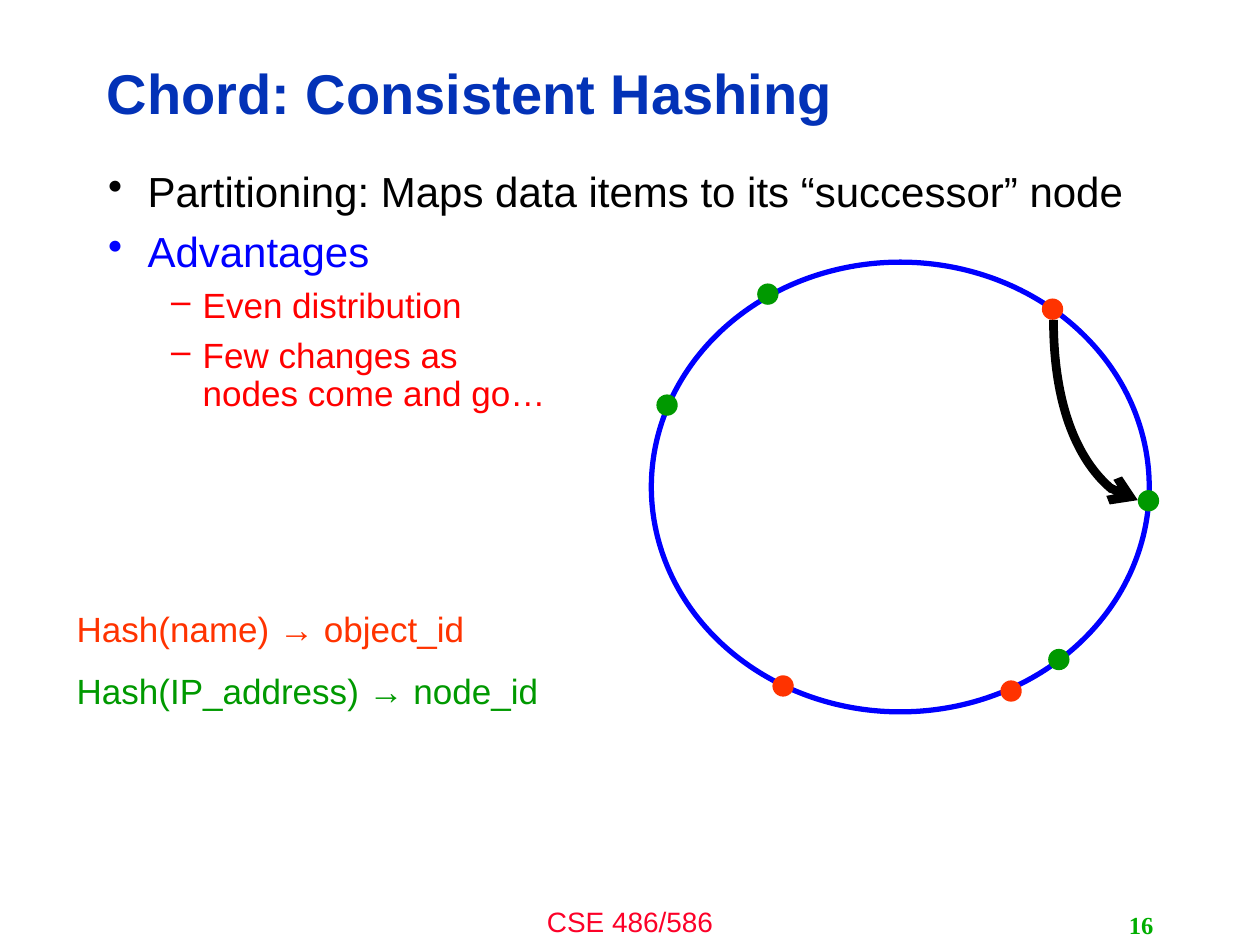
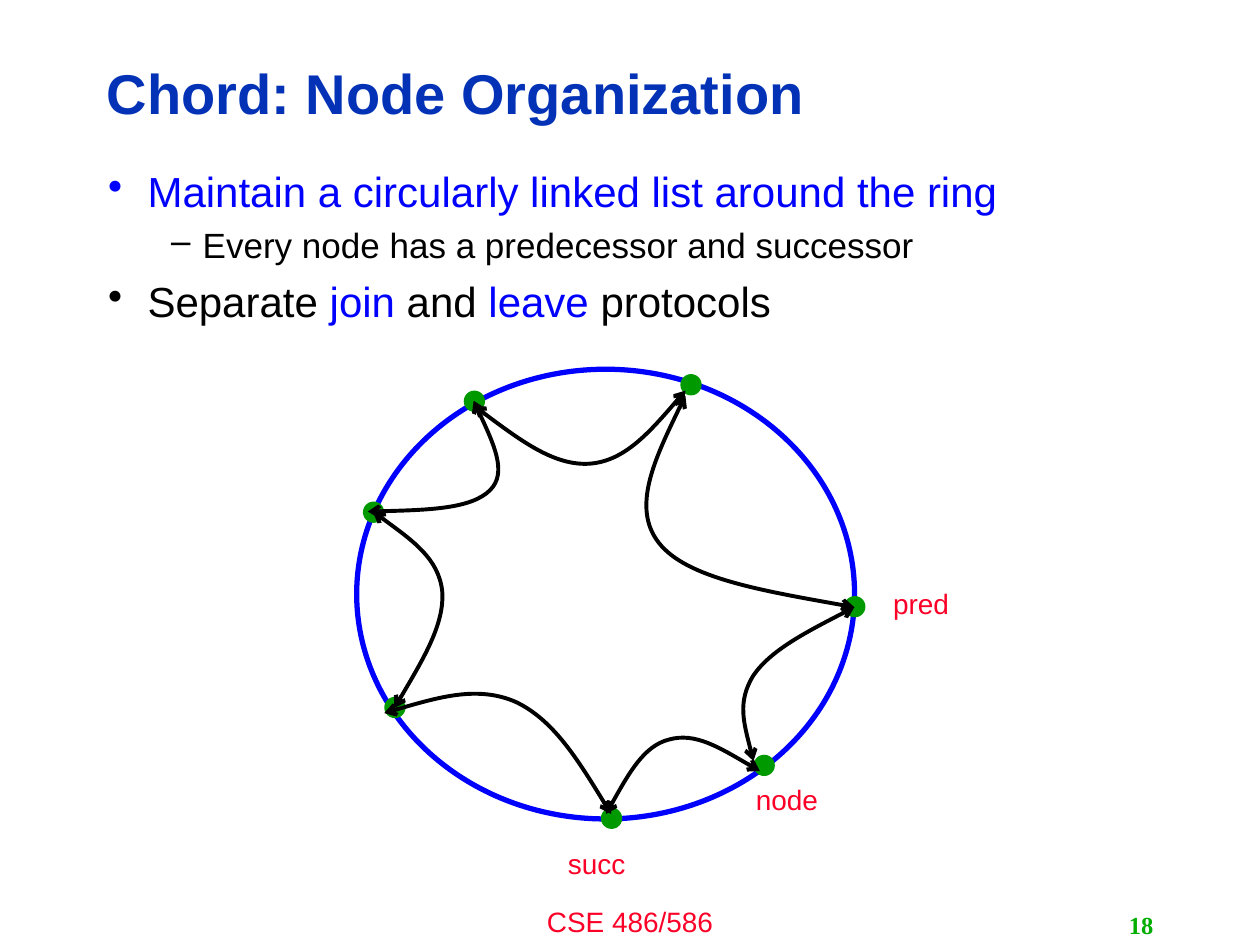
"""Build two slides on Chord: consistent hashing and node organization."""
from lxml import etree
from pptx import Presentation
from pptx.dml.color import RGBColor
from pptx.enum import shapes, text
from pptx.oxml import ns
from pptx.util import Pt

COLOURS = {
    "title": "0332B7", "ink": "000000", "blue": "0000FF", "red": "FF0000",
    "item": "FF3300", "node": "009900", "label": "FC0128", "number": "00AE00",
}
LEVELS = {"•": (24, 22.5, -22.5), "–": (20, 54, -18)}
RING_SIZE = (284.5, 257)
DOT = 12.2
LABEL_SIZE = 16


def add_text(slide, box, lines, size=LABEL_SIZE, face="Arial", bold=False, align="LEFT",
             anchor="TOP", spacing=1.0, gap=0.575):
    """Write lines of (bullet, [(words, colour), ...]); gap is a share of the text size."""
    frame = slide.shapes.add_textbox(*map(Pt, box)).text_frame
    frame.word_wrap = True
    frame.vertical_anchor = getattr(text.MSO_ANCHOR, anchor)
    for index, (bullet, pieces) in enumerate(lines):
        paragraph = frame.add_paragraph() if index else frame.paragraphs[0]
        line_size = size
        if bullet:
            line_size, margin, indent = LEVELS[bullet]
            properties = paragraph._p.get_or_add_pPr()
            properties.set("marL", str(Pt(margin)))
            properties.set("indent", str(Pt(indent)))
            etree.SubElement(properties, ns.qn("a:buChar")).set("char", bullet)
        paragraph.alignment = getattr(text.PP_ALIGN, align)
        paragraph.line_spacing = spacing
        paragraph.space_before = Pt(round(line_size * gap, 1) if index else 0)
        for words, colour in pieces:
            for row, part in enumerate(words.split("\n")):
                if row:
                    paragraph.add_line_break()
                run = paragraph.add_run()
                run.text = part
                run.font.size = Pt(line_size)
                run.font.name = face
                run.font.bold = bold
                run.font.color.rgb = RGBColor.from_string(COLOURS[colour])


def style_arrow(arrow, width, ends):
    """Draw a black line with open arrowheads at the given ends and no shadow."""
    arrow.line.color.rgb = RGBColor.from_string(COLOURS["ink"])
    arrow.line.width = Pt(width)
    for end in ends:
        etree.SubElement(arrow.line._get_or_add_ln(), ns.qn(f"a:{end}")).set("type", "arrow")
    etree.SubElement(arrow.element.spPr, ns.qn("a:effectLst"))


pages = [
    {
        "title": "Chord: Consistent Hashing",
        "number": "16",
        "body": [
            ("•", [("Partitioning: Maps data items to its “successor” node", "ink")]),
            ("•", [("Advantages", "blue")]),
            ("–", [("Even distribution", "red")]),
            ("–", [("Few changes as \nnodes come and go…", "red")]),
        ],
        "ring": (372.2, 149.8),
        "dots": {
            "item": [(595.4, 170.6), (571.7, 388.8), (441.4, 385.9)],
            "node": [(650.2, 280.1), (375.1, 225.4), (599, 370.8), (432.7, 162)],
        },
    },
    {
        "title": "Chord: Node Organization",
        "number": "18",
        "body": [
            ("•", [("Maintain a circularly linked list around the ring", "blue")]),
            ("–", [("Every node has a predecessor and successor", "ink")]),
            ("•", [("Separate ", "ink"), ("join", "blue"), (" and ", "ink"),
                   ("leave", "blue"), (" protocols", "ink")]),
        ],
        "ring": (203.8, 211),
        "dots": {
            "node": [(482.4, 340.6), (207.4, 286.6), (430.6, 431.3), (265, 223.2),
                     (219.6, 398.2), (343.4, 461.5), (388.8, 213.8)],
        },
    },
]

deck = Presentation()
deck.slide_width, deck.slide_height = Pt(720), Pt(540)
slides = []

for page in pages:
    slide = deck.slides.add_slide(deck.slide_layouts[6])
    slides.append(slide)
    add_text(slide, (240, 513.5, 240, 26.5), [(None, [("CSE 486/586", "label")])], align="CENTER")
    add_text(slide, (54, 26, 574.5, 58), [(None, [(page["title"], "title")])],
             size=32, bold=True, anchor="MIDDLE", spacing=0.9)
    add_text(slide, (54.7, 94.3, 605, 388), page["body"], spacing=0.9, gap=0.345)
    add_text(slide, (516.2, 517, 150, 23), [(None, [(page["number"], "number")])],
             size=14, face="Times New Roman", bold=True, align="RIGHT", anchor="MIDDLE")

    ring = slide.shapes.add_shape(shapes.MSO_SHAPE.OVAL, *map(Pt, page["ring"] + RING_SIZE))
    ring.shadow.inherit = False
    ring.fill.background()
    ring.line.color.rgb = RGBColor.from_string(COLOURS["blue"])
    ring.line.width = Pt(3)
    for kind, places in page["dots"].items():
        for place in places:
            dot = slide.shapes.add_shape(shapes.MSO_SHAPE.OVAL, *map(Pt, place + (DOT, DOT)))
            dot.shadow.inherit = False
            dot.fill.solid()
            dot.fill.fore_color.rgb = RGBColor.from_string(COLOURS[kind])
            dot.line.fill.background()

hashing, organization = slides

add_text(hashing, (36.7, 343.4, 288, 67.7),
         [(None, [("Hash(name) → object_id", "item")]),
          (None, [("Hash(IP_address) → node_id", "node")])], size=20)
successor = hashing.shapes.add_connector(
    shapes.MSO_CONNECTOR.CURVE, *map(Pt, (677.6, 210.2, 574.6, 258.4)))
successor.element.spPr.find(ns.qn("a:xfrm")).set("rot", str(270 * 60000))
successor.element.spPr.find(ns.qn("a:prstGeom")).set("prst", "curvedConnector2")
style_arrow(successor, 5, ["tailEnd"])

neighbour_links = [
    [(430.6, 434.9), (426.2, 417.6), (421.2, 401), (430.6, 385.9),
     (440.6, 371.5), (464.4, 359.3), (488.2, 347)],
    [(488.2, 347), (440.6, 338.4), (392.4, 330.5), (376.6, 310.3),
     (360.7, 290.2), (375.8, 258.5), (391.7, 226.1)],
    [(391.7, 223.2), (374.4, 243.4), (357.1, 263.5), (337, 265),
     (316.8, 266.4), (293.8, 249.1), (270.7, 231.8)],
    [(270.7, 229), (280.1, 249.1), (290.2, 270), (280.1, 280.1),
     (269.3, 290.9), (239.8, 291.6), (210.2, 292.3)],
    [(213.1, 292.3), (231.8, 306), (250.6, 319), (252.7, 337.7),
     (254.2, 356.4), (239.8, 380.2), (225.4, 404.6)],
    [(219.6, 407.5), (246.2, 399.6), (272.9, 391.7), (294.5, 401),
     (316.1, 411.1), (332.6, 437.8), (349.2, 465.1)],
    [(346.3, 465.1), (357.1, 445.7), (367.9, 426.2), (382.3, 422.6),
     (397.4, 418.3), (415.4, 429.8), (434.2, 440.6)],
]
for points in neighbour_links:
    start, *rest = [(Pt(x), Pt(y)) for x, y in points]
    outline = organization.shapes.build_freeform(*start)
    outline.add_line_segments(rest, close=False)
    link = outline.convert_to_shape()
    segments = list(link.element.iter(ns.qn("a:lnTo")))
    for first in range(0, len(segments), 3):
        curve = etree.SubElement(segments[first].getparent(), ns.qn("a:cubicBezTo"))
        for segment in segments[first:first + 3]:
            curve.append(segment[0])
            segment.getparent().remove(segment)
    link.fill.background()
    style_arrow(link, 2.25, ["headEnd", "tailEnd"])

for role, left, top in [("node", 424.8, 443.5), ("pred", 503.3, 331.9), ("succ", 317.5, 480.2)]:
    add_text(organization, (left, top, 72, 36), [(None, [(role, "label")])])

deck.save("out.pptx")
